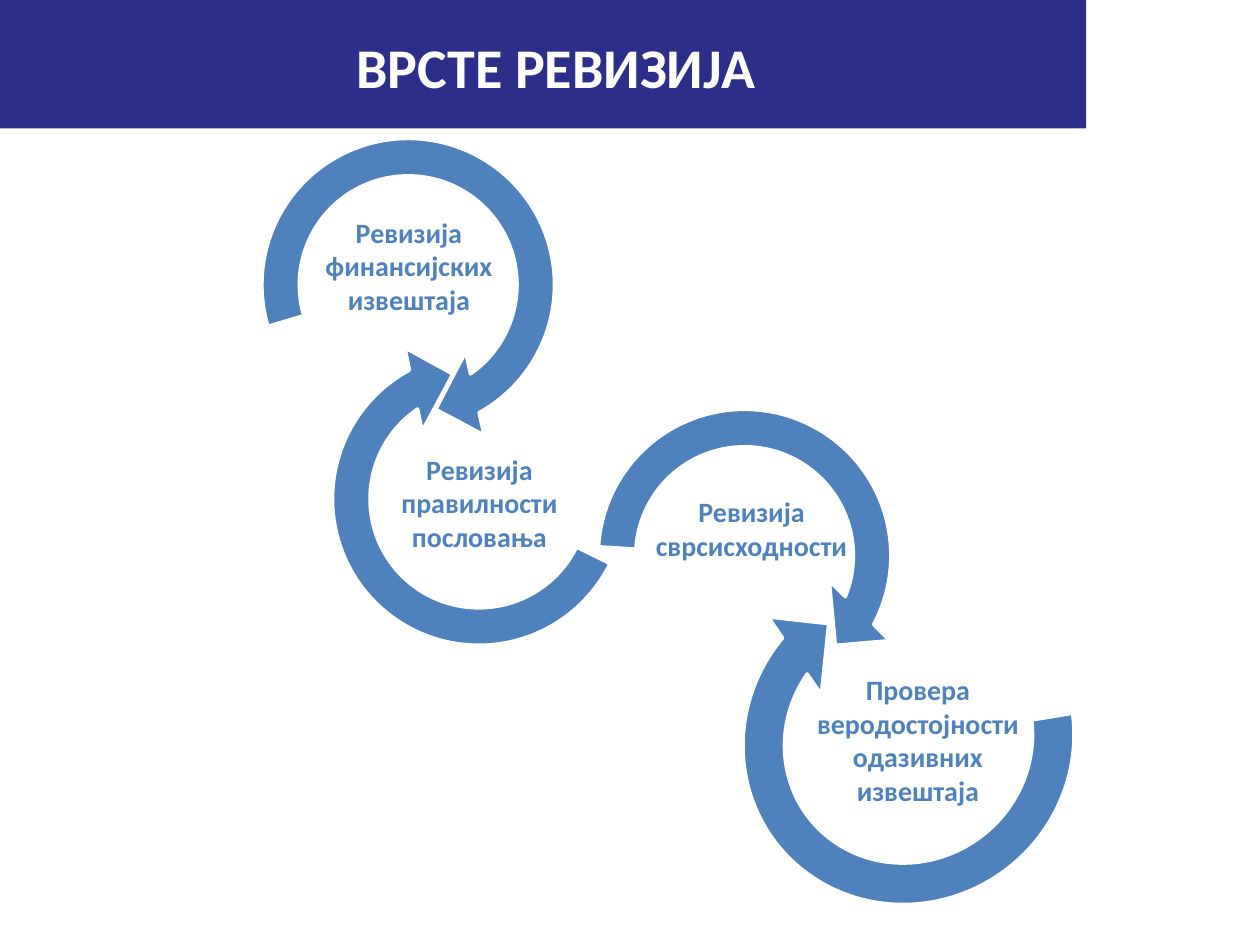
from pptx import Presentation
from pptx.dml.color import RGBColor
from pptx.enum.shapes import MSO_SHAPE as SHAPE
from pptx.enum.text import MSO_AUTO_SIZE as AUTO, PP_ALIGN as ALIGN
from pptx.util import Inches, Pt

COLORS = {"navy": "2D2D8A", "blue": "4F81BD", "white": "FFFFFF"}


def add_text(text, left, top, width, height, size=16, color="blue"):
    tf = s.shapes.add_textbox(Inches(left), Inches(top),
                              Inches(width), Inches(height)).text_frame
    tf.word_wrap = True
    tf.auto_size = AUTO.SHAPE_TO_FIT_TEXT
    p = tf.paragraphs[0]
    p.alignment = ALIGN.CENTER
    r = p.add_run()
    r.text = text
    r.font.name = "Calibri"
    r.font.size = Pt(size)
    r.font.bold = True
    r.font.color.rgb = RGBColor.from_string(COLORS[color])


def add_filled(shape, left, top, width, height, color):
    sp = s.shapes.add_shape(shape, Inches(left), Inches(top),
                            Inches(width), Inches(height))
    sp.shadow.inherit = False
    sp.fill.solid()
    sp.fill.fore_color.rgb = RGBColor.from_string(COLORS[color])
    return sp


prs = Presentation()
prs.slide_width, prs.slide_height = Inches(10), Inches(7.5)
s = prs.slides.add_slide(prs.slide_layouts[6])

# Title band
band = add_filled(SHAPE.RECTANGLE, -0.02, 0, 8.64, 1.02, "navy")
band.line.fill.background()
add_text("ВРСТЕ РЕВИЗИЈА", 0.83, 0.21, 7.17, 0.64, size=32, color="white")

# Circular arrows, back to front: left, top, width, height, rotation, start angle
arrows = [
    (5.67, 4.38, 3.08, 2.99, 141.6, 125.43),
    (4.56, 3.06, 2.7, 2.7, 310.6, 139.71),
    (2.45, 2.61, 2.7, 2.7, 164.2, 133.21),
    (1.89, 0.91, 2.7, 2.7, 343.5, 108),
]
for left, top, width, height, rotation, start in arrows:
    sp = add_filled(SHAPE.CIRCULAR_ARROW, left, top, width, height, "blue")
    sp.rotation = rotation
    for i, value in enumerate((0.11, 11.42, 45, start, 0.125)):
        sp.adjustments[i] = value
    sp.line.color.rgb = RGBColor.from_string(COLORS["white"])
    sp.line.width = Pt(2)

# Audit types inside the arrows
labels = [
    ("Ревизија финансијских извештаја", 2.39, 1.66, 1.71, 0.91),
    ("Ревизија правилности пословања", 2.95, 3.54, 1.71, 0.91),
    ("Ревизија сврсисходности", 5.08, 3.88, 1.77, 0.64),
    ("Провера веродостојности одазивних извештаја", 6.26, 5.29, 2.05, 1.18),
]
for label in labels:
    add_text(*label)

prs.save("out.pptx")
